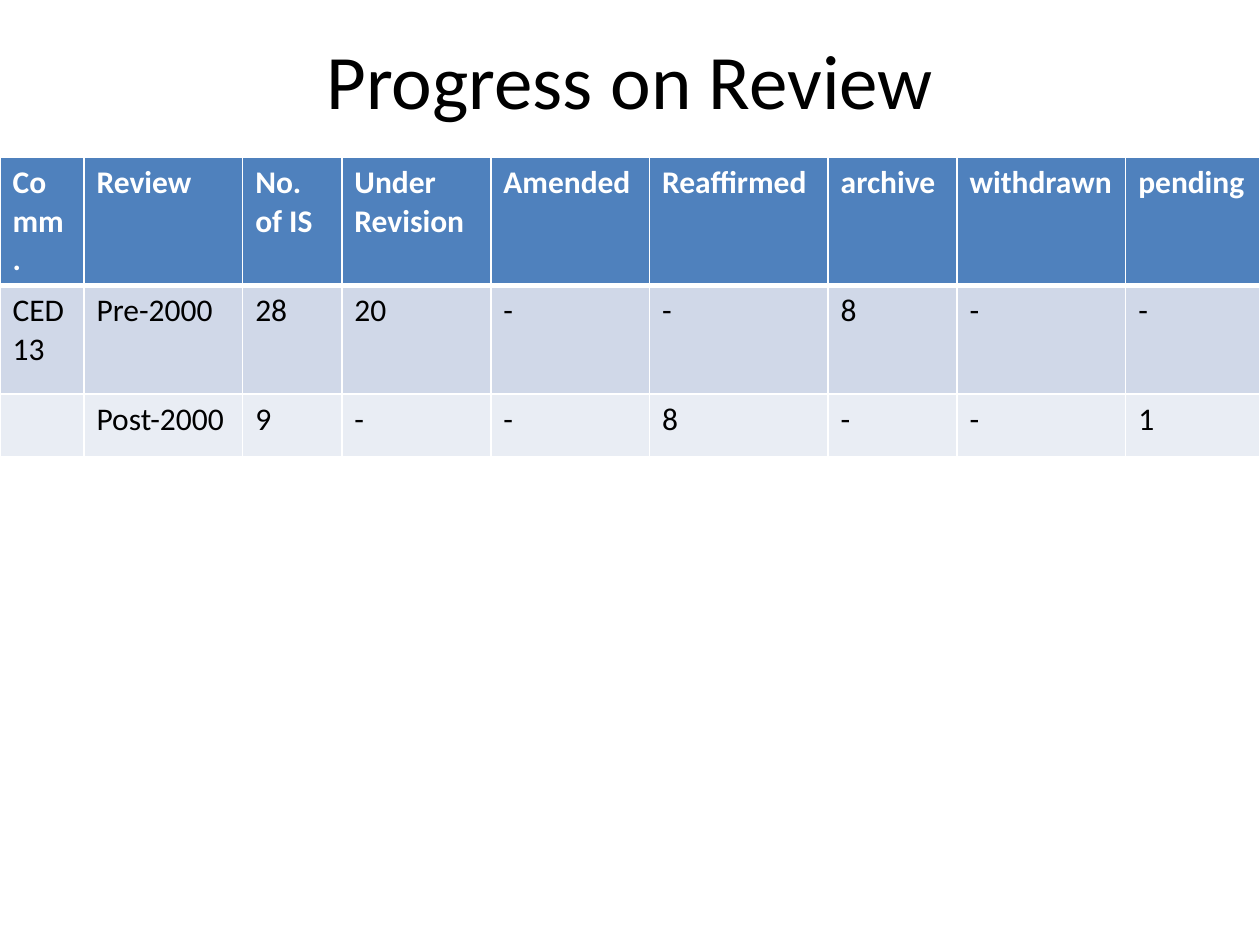
from dataclasses import dataclass

from lxml import etree
from pptx import Presentation
from pptx.dml.color import RGBColor as RGB
from pptx.enum.text import MSO_ANCHOR as Anchor, PP_ALIGN as Align
from pptx.oxml.ns import qn
from pptx.util import Pt


@dataclass(frozen=True)
class Theme:
    font: str = "Calibri"
    title_size: float = 44
    table_size: float = 18
    text: str = "000000"
    white: str = "FFFFFF"
    header: str = "4F81BD"
    bands: tuple = ("D0D8E8", "E9EDF4")
    thin: float = 1
    thick: float = 3


THEME = Theme()

COL_WIDTHS = [48, 90.7, 56.7, 85.1, 90.7, 102.1, 73.7, 96.4, 76.6]
ROW_HEIGHTS = [62, 62, 36]
ROWS = [
    ["Comm.", "Review", "No. of IS", "Under Revision", "Amended",
     "Reaffirmed", "archive", "withdrawn", "pending"],
    ["CED 13", "Pre-2000", "28", "20", "-", "-", "8", "-", "-"],
    ["", "Post-2000", "9", "-", "-", "8", "-", "-", "1"],
]


def write(tf, text, size, color=THEME.text, bold=False, align=Align.LEFT):
    p = tf.paragraphs[0]
    p.alignment = align
    # An empty cell keeps its type size on the paragraph
    target = p.add_run() if text else p
    if text:
        target.text = text
    font = target.font
    font.name, font.size, font.bold = THEME.font, Pt(size), bold
    font.color.rgb = RGB.from_string(color)


def set_borders(cell, color, **widths):
    """Draw the sides L, R, T and B; the lines precede the cell's fill."""
    tc_pr = cell._tc.get_or_add_tcPr()
    for i, (side, width) in enumerate(widths.items()):
        ln = etree.Element(qn(f"a:ln{side}"), w=str(Pt(width)))
        fill = etree.SubElement(ln, qn("a:solidFill"))
        etree.SubElement(fill, qn("a:srgbClr"), val=color)
        tc_pr.insert(i, ln)


def add_title(slide, text, x, y, w, h):
    sp = slide.shapes.title
    sp.left, sp.top, sp.width, sp.height = Pt(x), Pt(y), Pt(w), Pt(h)
    tf = sp.text_frame
    tf.vertical_anchor = Anchor.MIDDLE
    write(tf, text, THEME.title_size, align=Align.CENTER)


def add_review_table(slide, x, y, w, h):
    table = slide.shapes.add_table(
        len(ROWS), len(COL_WIDTHS), Pt(x), Pt(y), Pt(w), Pt(h)).table
    for col, width in zip(table.columns, COL_WIDTHS):
        col.width = Pt(w * width / sum(COL_WIDTHS))
    for row, height in zip(table.rows, ROW_HEIGHTS):
        row.height = Pt(h * height / sum(ROW_HEIGHTS))

    for r, values in enumerate(ROWS):
        is_header = r == 0
        fill = THEME.header if is_header else THEME.bands[(r - 1) % 2]
        # The rule under the header is the only thick one
        top = THEME.thick if r == 1 else THEME.thin
        bottom = THEME.thick if is_header else THEME.thin
        for c, value in enumerate(values):
            cell = table.cell(r, c)
            cell.fill.solid()
            cell.fill.fore_color.rgb = RGB.from_string(fill)
            set_borders(cell, THEME.white, L=THEME.thin, R=THEME.thin,
                        T=top, B=bottom)
            write(cell.text_frame, value, THEME.table_size, bold=is_header,
                  color=THEME.white if is_header else THEME.text)


def main():
    prs = Presentation()
    prs.slide_width, prs.slide_height = Pt(720), Pt(540)
    slide = prs.slides.add_slide(prs.slide_layouts[5])  # Title Only
    add_title(slide, "Progress on Review", 36, 0, 648, 90)
    add_review_table(slide, 0, 90, 720, sum(ROW_HEIGHTS))
    prs.save("out.pptx")


if __name__ == "__main__":
    main()
